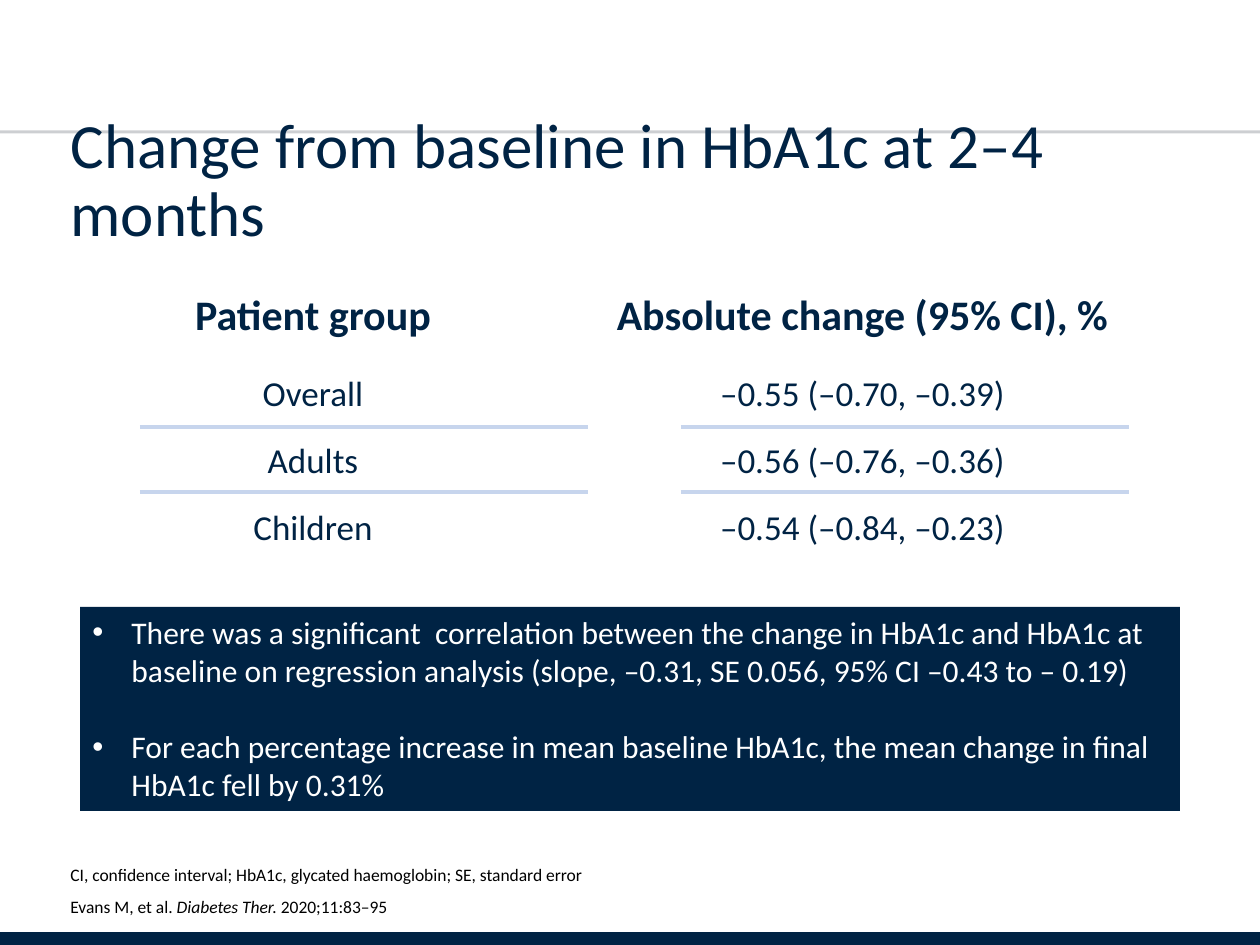
from lxml.etree import SubElement
from pptx import Presentation
from pptx.dml.color import RGBColor
from pptx.enum.shapes import MSO_CONNECTOR as CONNECTOR, MSO_SHAPE as SHAPE
from pptx.enum.text import MSO_ANCHOR as ANCHOR, MSO_AUTO_SIZE as AUTO_SIZE, PP_ALIGN as ALIGN
from pptx.oxml.ns import qn
from pptx.util import Emu, Pt

# Content
TITLE = "Change from baseline in HbA1c at 2–4 months"
RESULTS = [
    ("Patient group", "Absolute change (95% CI), %"),
    ("Overall", "–0.55 (–0.70, –0.39)"),
    ("Adults", "–0.56 (–0.76, –0.36)"),
    ("Children", "–0.54 (–0.84, –0.23)"),
]
SPARE_ROWS = 3  # empty table rows below the results
FINDINGS = [
    "There was a significant  correlation between the change in HbA1c and HbA1c at "
    "baseline on regression analysis (slope, –0.31, SE 0.056, 95% CI –0.43 to – 0.19)",
    "For each percentage increase in mean baseline HbA1c, the mean change in final "
    "HbA1c fell by 0.31%",
]
# Each footnote is a list of (text, italic) runs
FOOTNOTES = [
    [("CI, confidence interval; HbA1c, glycated haemoglobin; SE, standard error", False)],
    [("Evans M, et al. ", False), ("Diabetes Ther. ", True), ("2020;11:83–95", False)],
]

# Style and layout, in px (126 to the inch)
NAVY, WHITE, BLACK, GREY, PALE_BLUE = "002344", "FFFFFF", "000000", "9DA1A6", "C7D5ED"
FONT = "Calibri"
SLIDE_W, SLIDE_H = 1260, 945
COLUMN_WIDTHS = [466, 633]
HEADER_H, ROW_H = 77, 67
TABLE_LEFT, TABLE_TOP = 80, 284
PANEL_W = 1100
RULE_LEFTS, RULE_TOPS, RULE_W = [140, 681], [427, 492], 448
BULLET_INDENT = 39


def px(n):
    return Emu(n * 914400 // 126)


def rgb(value):
    return RGBColor.from_string(value)


def style(paragraph, size, color, bold=False):
    font = paragraph.font
    font.name, font.size, font.bold = FONT, Pt(size), bold
    font.color.rgb = rgb(color)


def add_line(slide, x1, y1, x2, y2, color, width):
    line = slide.shapes.add_connector(CONNECTOR.STRAIGHT, px(x1), px(y1), px(x2), px(y2))
    line.line.color.rgb = rgb(color)
    line.line.width = Pt(width)
    SubElement(line.element.spPr, qn("a:effectLst"))
    return line


def add_bullet(paragraph):
    props = paragraph._p.get_or_add_pPr()
    props.set("marL", str(px(BULLET_INDENT)))
    props.set("indent", str(-px(BULLET_INDENT)))
    SubElement(props, qn("a:buFont"), typeface="Arial")
    SubElement(props, qn("a:buChar"), char="•")


def add_title(slide):
    title = slide.shapes.title
    title.left, title.top, title.width, title.height = px(58), px(157), px(1202), px(93)
    frame = title.text_frame
    frame.text = TITLE
    frame.auto_size = AUTO_SIZE.NONE
    frame.vertical_anchor = ANCHOR.BOTTOM
    frame.margin_bottom = 0
    paragraph = frame.paragraphs[0]
    paragraph.alignment = ALIGN.LEFT
    paragraph.line_spacing = 0.9
    style(paragraph, 36, NAVY)


def add_frame_lines(slide):
    # Both lines lie behind the title
    header = add_line(slide, 0, 132, SLIDE_W, 132, GREY, 1.75)
    color = header.element.find(".//" + qn("a:srgbClr"))
    SubElement(color, qn("a:alpha"), val="50000")
    footer = add_line(slide, 0, 941, SLIDE_W, 941, NAVY, 10)
    for line in (footer, header):
        slide.shapes.title.element.addprevious(line.element)


def add_results(slide):
    rows = RESULTS + [("", "")] * SPARE_ROWS
    height = HEADER_H + ROW_H * (len(rows) - 1)
    table = slide.shapes.add_table(len(rows), len(COLUMN_WIDTHS), px(TABLE_LEFT),
                                   px(TABLE_TOP), px(sum(COLUMN_WIDTHS)), px(height)).table
    for column, width in zip(table.columns, COLUMN_WIDTHS):
        column.width = px(width)
    for r, values in enumerate(rows):
        is_header = r == 0
        table.rows[r].height = px(HEADER_H if is_header else ROW_H)
        for c, value in enumerate(values):
            cell = table.cell(r, c)
            cell.fill.solid()
            cell.fill.fore_color.rgb = rgb(WHITE)
            cell.vertical_anchor = ANCHOR.TOP if is_header else ANCHOR.MIDDLE
            cell.text = value
            paragraph = cell.text_frame.paragraphs[0]
            paragraph.alignment = ALIGN.CENTER
            style(paragraph, 24 if is_header else 20, NAVY, bold=is_header)


def add_findings(slide):
    panel = slide.shapes.add_shape(SHAPE.RECTANGLE, px(TABLE_LEFT), px(607),
                                   px(PANEL_W), px(204))
    panel.shadow.inherit = False
    panel.fill.solid()
    panel.fill.fore_color.rgb = rgb(NAVY)
    panel.line.fill.background()
    frame = panel.text_frame
    frame.word_wrap = True
    frame.vertical_anchor = ANCHOR.TOP
    for i, finding in enumerate(FINDINGS):
        paragraph = frame.add_paragraph() if i else frame.paragraphs[0]
        paragraph.text = finding
        paragraph.alignment = ALIGN.LEFT
        if i:
            paragraph.space_before = Pt(22)
        add_bullet(paragraph)
        style(paragraph, 18, WHITE)


def add_footnotes(slide):
    frame = slide.shapes.add_textbox(px(58), px(885), px(1150), px(38)).text_frame
    frame.word_wrap = True
    frame.vertical_anchor = ANCHOR.BOTTOM
    for i, runs in enumerate(FOOTNOTES):
        paragraph = frame.add_paragraph() if i else frame.paragraphs[0]
        paragraph.space_after = Pt(6)
        style(paragraph, 10, BLACK)
        for text, italic in runs:
            run = paragraph.add_run()
            run.text = text
            run.font.italic = italic


def main():
    deck = Presentation()
    deck.slide_width, deck.slide_height = px(SLIDE_W), px(SLIDE_H)
    slide = deck.slides.add_slide(deck.slide_layouts[5])
    add_title(slide)
    add_frame_lines(slide)
    add_results(slide)
    add_footnotes(slide)
    add_findings(slide)
    # Rules between the patient groups
    for left in RULE_LEFTS:
        for top in RULE_TOPS:
            add_line(slide, left, top, left + RULE_W, top, PALE_BLUE, 2)
    deck.save("out.pptx")


if __name__ == "__main__":
    main()
